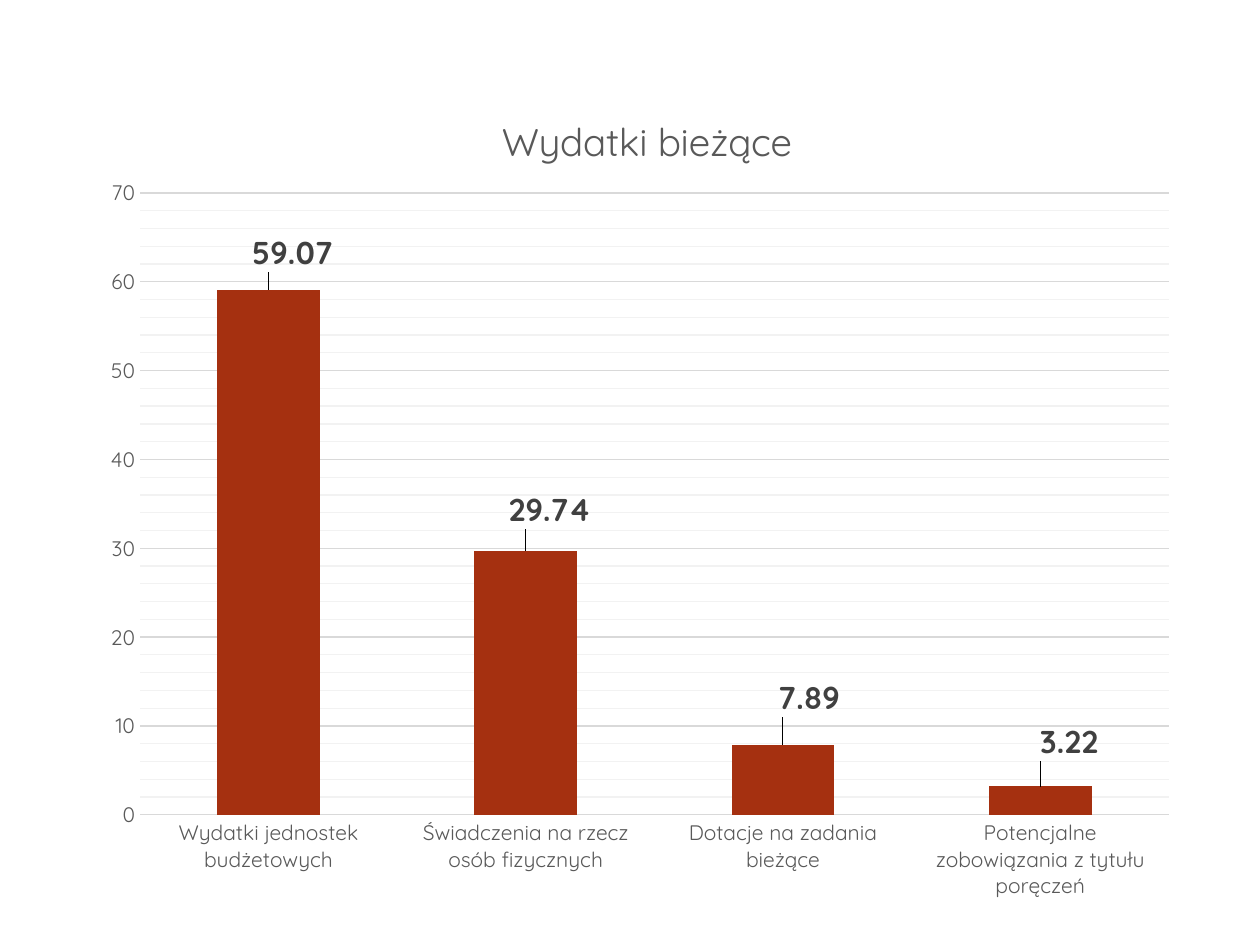
from pptx import Presentation
from pptx.chart.data import CategoryChartData
from pptx.dml.color import RGBColor
from pptx.enum.chart import XL_CHART_TYPE, XL_LABEL_POSITION, XL_TICK_MARK
from pptx.oxml import parse_xml
from pptx.oxml.ns import nsdecls, qn
from pptx.util import Pt

COLUMN = XL_CHART_TYPE.COLUMN_CLUSTERED
OUTSIDE = XL_LABEL_POSITION.OUTSIDE_END
NO_TICK = XL_TICK_MARK.NONE
PX = 914400 // 126

TITLE = "Wydatki bieżące"
EXPENSES = {
    "Wydatki jednostek budżetowych": 59.07,
    "Świadczenia na rzecz osób fizycznych": 29.74,
    "Dotacje na zadania bieżące": 7.89,
    "Potencjalne zobowiązania z tytułu poręczeń": 3.22,
}
LABEL_SHIFTS = [(24, -13), (24, -16), (26, -22), (29, -20)]
CHART_BOX = (88, 69, 1102, 847)
PLOT_BOX = (52, 124, 1029, 622)
TITLE_AT = (407, 38)


def rgb(color):
    return RGBColor.from_string(color)


def set_layout(parent, index, x, y, w=None, h=None, edge=True):
    """Place a chart part, in px from the chart's edge or from its default spot."""
    for old in parent.findall(qn("c:layout")):
        parent.remove(old)
    width, height = CHART_BOX[2:]
    parts = ['<c:layoutTarget val="inner"/>'] if w else []
    if edge:
        parts += ['<c:xMode val="edge"/>', '<c:yMode val="edge"/>']
    sizes = {"x": x / width, "y": y / height}
    if w:
        sizes.update(w=w / width, h=h / height)
    parts += [f'<c:{key} val="{value:.4f}"/>' for key, value in sizes.items()]
    parent.insert(index, parse_xml(
        f'<c:layout {nsdecls("c")}><c:manualLayout>{"".join(parts)}'
        "</c:manualLayout></c:layout>"))


class SlideBuilder:
    font = "Quicksand"
    gray, dark, bar = "595959", "404040", "A53010"
    grid, minor_grid = "D9D9D9", "F2F2F2"

    def __init__(self, prs):
        self.slide = prs.slides.add_slide(prs.slide_layouts[6])

    def style(self, font, size, color, bold=False):
        font.name, font.size, font.bold = self.font, Pt(size), bold
        font.color.rgb = rgb(color)

    def gridlines(self, chart):
        axis = chart.value_axis
        axis.has_minor_gridlines = True
        line = axis.major_gridlines.format.line
        line.color.rgb, line.width = rgb(self.grid), Pt(0.75)
        minor = chart._chartSpace.find(".//" + qn("c:minorGridlines"))
        minor.append(parse_xml(
            f'<c:spPr {nsdecls("c", "a")}><a:ln w="{Pt(0.75)}"><a:solidFill>'
            f'<a:srgbClr val="{self.minor_grid}"/></a:solidFill></a:ln></c:spPr>'))

    def axis(self, axis):
        axis.major_tick_mark = axis.minor_tick_mark = NO_TICK
        axis.format.line.fill.background()
        self.style(axis.tick_labels.font, 12, self.gray)

    def title(self, chart, text):
        chart.has_title = True
        tf = chart.chart_title.text_frame
        tf.text = text
        self.style(tf.paragraphs[0].runs[0].font, 22, self.gray)
        set_layout(chart._chartSpace.find(".//" + qn("c:title")), 1, *TITLE_AT)

    def labels(self, chart, series):
        for i in range(len(EXPENSES)):
            label = series.points[i].data_label
            self.style(label.font, 18, self.dark, True)
            label.position = OUTSIDE
        for dlbl, shift in zip(chart._chartSpace.iter(qn("c:dLbl")), LABEL_SHIFTS):
            set_layout(dlbl, 1, *shift, edge=False)

    def column_chart(self, title, values):
        data = CategoryChartData()
        data.categories = list(values)
        data.add_series(title, list(values.values()))
        box = [n * PX for n in CHART_BOX]
        chart = self.slide.shapes.add_chart(COLUMN, *box, data).chart
        self.style(chart.font, 10, "000000")
        chart.has_legend = False
        self.title(chart, title)

        self.axis(chart.category_axis)
        value_axis = chart.value_axis
        self.axis(value_axis)
        value_axis.minimum_scale, value_axis.maximum_scale = 0, 70
        value_axis.major_unit, value_axis.minor_unit = 10, 2
        self.gridlines(chart)

        plot = chart.plots[0]
        plot.gap_width = 150
        plot.vary_by_categories = False
        series = plot.series[0]
        series.format.fill.solid()
        series.format.fill.fore_color.rgb = rgb(self.bar)
        self.labels(chart, series)
        plot_area = chart._chartSpace.find(".//" + qn("c:plotArea"))
        set_layout(plot_area, 0, *PLOT_BOX)


def main():
    prs = Presentation()
    prs.slide_width, prs.slide_height = 1260 * PX, 945 * PX
    SlideBuilder(prs).column_chart(TITLE, EXPENSES)
    prs.save("out.pptx")


if __name__ == "__main__":
    main()
